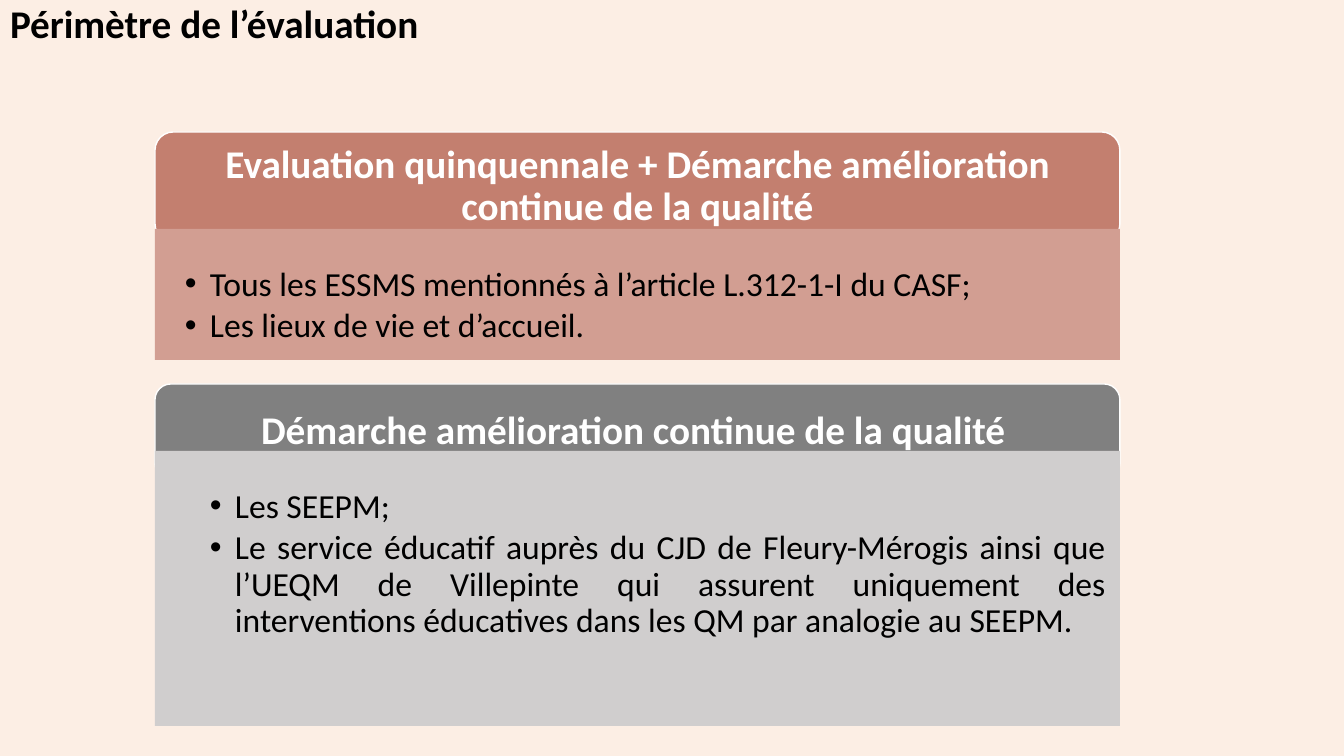
"""Build the slide on the scope of the evaluation."""
from lxml import etree
from pptx import Presentation
from pptx.dml.color import RGBColor
from pptx.enum.shapes import MSO_SHAPE
from pptx.enum.text import MSO_ANCHOR, MSO_AUTO_SIZE, PP_ALIGN
from pptx.oxml.ns import qn
from pptx.util import Pt

RECT, ROUND = MSO_SHAPE.RECTANGLE, MSO_SHAPE.ROUNDED_RECTANGLE
TOP, MIDDLE = MSO_ANCHOR.TOP, MSO_ANCHOR.MIDDLE
LEFT, CENTER, JUSTIFY = PP_ALIGN.LEFT, PP_ALIGN.CENTER, PP_ALIGN.JUSTIFY
NO_FIT = MSO_AUTO_SIZE.NONE

TITLE = "Périmètre de l’évaluation"
PANELS = [
    {
        "head": "Evaluation quinquennale + Démarche amélioration continue de la qualité",
        "items": [
            "Tous les ESSMS mentionnés à l’article L.312-1-I du CASF;",
            "Les lieux de vie et d’accueil.",
        ],
        "fills": ("C37F6F", "D29E92"),
        "top": 132, "tall": 110, "split": 229, "end": 360,
        "indent": 25, "align": LEFT,
    },
    {
        "head": "Démarche amélioration continue de la qualité ",
        "items": [
            "Les SEEPM;",
            "Le service éducatif auprès du CJD de Fleury-Mérogis ainsi que "
            "l’UEQM de Villepinte qui assurent uniquement des interventions "
            "éducatives dans les QM par analogie au SEEPM.",
        ],
        "fills": ("808080", "D0CECE"),
        "top": 384, "tall": 95, "split": 451, "end": 726,
        "indent": 50, "align": JUSTIFY,
    },
]
WIDE, HIGH = 1344, 756
LEFT_X, PANEL_W = 155, 965
HANG = 25


def px(n):
    return round(n * 914400 / 100.8)


def color(code):
    return RGBColor.from_string(code)


def paint(shape, code):
    shape.fill.solid()
    shape.fill.fore_color.rgb = color(code)


def write(shape, lines, size, code, bold, align, anchor, pads, after=0):
    frame = shape.text_frame
    frame.text = "\n".join(lines)
    frame.word_wrap = True
    frame.auto_size = NO_FIT
    frame.vertical_anchor = anchor
    (frame.margin_left, frame.margin_top,
     frame.margin_right, frame.margin_bottom) = map(px, pads)
    for para in frame.paragraphs:
        para.alignment = align
        para.line_spacing = 0.9
        para.space_before = Pt(0)
        para.space_after = Pt(after)
        for run in para.runs:
            font = run.font
            font.name, font.size, font.bold = "Calibri", Pt(size), bold
            font.color.rgb = color(code)


def bullet(para, indent):
    props = para._p.get_or_add_pPr()
    props.set("marL", str(px(indent)))
    props.set("indent", str(-px(HANG)))
    etree.SubElement(props, qn("a:buFont")).set("typeface", "Arial")
    etree.SubElement(props, qn("a:buChar")).set("char", "•")


def block(slide, kind, top, tall, code):
    shape = slide.shapes.add_shape(
        kind, px(LEFT_X), px(top), px(PANEL_W), px(tall))
    shape.shadow.inherit = False
    paint(shape, code)
    return shape


def panel(slide, data):
    dark, light = data["fills"]
    head = block(slide, ROUND, data["top"], data["tall"], dark)
    head.line.color.rgb = color("FFFFFF")
    head.line.width = Pt(1)
    write(head, [data["head"]], 28, "FFFFFF", True, CENTER, MIDDLE, [12] * 4)

    body = block(slide, RECT, data["split"], data["end"] - data["split"], light)
    body.line.fill.background()
    write(body, data["items"], 24, "000000", False, data["align"], TOP,
          (30, 38, 14, 3), 4)
    for para in body.text_frame.paragraphs:
        bullet(para, data["indent"])


def main():
    deck = Presentation()
    deck.slide_width, deck.slide_height = px(WIDE), px(HIGH)
    slide = deck.slides.add_slide(deck.slide_layouts[5])
    title = slide.shapes.title
    title.left, title.top, title.width, title.height = 0, 0, px(WIDE), px(HIGH)
    paint(title, "FCEEE4")
    write(title, [TITLE], 28, "000000", True, LEFT, TOP, (10, 5, 10, 5))
    for data in PANELS:
        panel(slide, data)
    deck.save("out.pptx")


if __name__ == "__main__":
    main()
